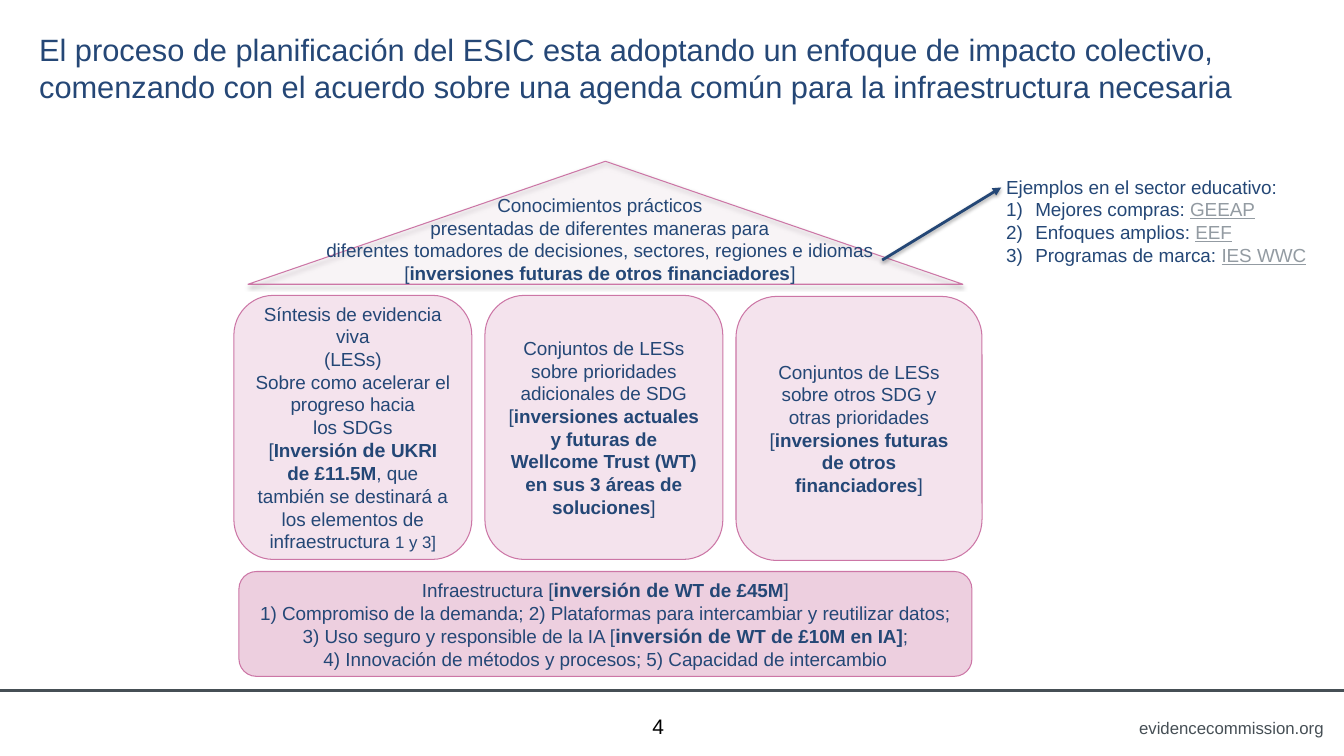
from lxml import etree
from pptx import Presentation
from pptx.dml.color import RGBColor
from pptx.enum.shapes import MSO_CONNECTOR, MSO_SHAPE
from pptx.enum.text import MSO_ANCHOR, PP_ALIGN
from pptx.oxml import parse_xml
from pptx.oxml.ns import nsdecls, qn
from pptx.util import Inches, Pt

LEFT, CENTER, RIGHT = PP_ALIGN.LEFT, PP_ALIGN.CENTER, PP_ALIGN.RIGHT
TOP, MIDDLE = MSO_ANCHOR.TOP, MSO_ANCHOR.MIDDLE
ROUNDED, TRIANGLE = MSO_SHAPE.ROUNDED_RECTANGLE, MSO_SHAPE.ISOSCELES_TRIANGLE
STRAIGHT = MSO_CONNECTOR.STRAIGHT
NAVY, PINK, SLATE, GREY, BLACK = "244776", "CC76A6", "464F55", "939BA2", "000000"
BODY_SIZE = 13.5


def color(hex_string):
    return RGBColor.from_string(hex_string)


def write(shape, paragraphs, size=BODY_SIZE, ink=NAVY, align=CENTER, anchor=MIDDLE, wrap=True):
    """Each paragraph is a list of (text, run options); a newline is a line break."""
    frame = shape.text_frame
    frame.word_wrap = wrap
    frame.vertical_anchor = anchor
    for index, runs in enumerate(paragraphs):
        paragraph = frame.paragraphs[0] if index == 0 else frame.add_paragraph()
        paragraph.alignment = align
        for text, options in runs:
            for line_index, line in enumerate(text.split("\n")):
                if line_index:
                    paragraph.add_line_break()
                    line_break = paragraph._p.findall(qn("a:br"))[-1]
                    etree.SubElement(line_break, qn("a:rPr"), sz=str(int(size * 100)))
                if not line:
                    continue
                run = paragraph.add_run()
                run.text = line
                run.font.name = "Arial"
                run.font.size = Pt(options.get("size", size))
                run.font.bold = options.get("bold", False)
                run.font.underline = options.get("underline", False)
                run.font.color.rgb = color(options.get("ink", ink))


presentation = Presentation()
presentation.slide_width = Inches(13.33)
presentation.slide_height = Inches(7.5)
slide = presentation.slides.add_slide(presentation.slide_layouts[6])
shapes = slide.shapes
plain, bold, bold_large = {}, {"bold": True}, {"bold": True, "size": 14}

# Footer rule, site address and page number
footer_rule = shapes.add_connector(STRAIGHT, Inches(0), Inches(6.85), Inches(13.33), Inches(6.85))
footer_rule.line.color.rgb = color(SLATE)
footer_rule.line.width = Pt(2)
etree.SubElement(footer_rule._element.spPr, qn("a:effectLst"))

site = shapes.add_textbox(Inches(11.17), Inches(7.07), Inches(2.06), Inches(0.3))
write(site, [[("evidencecommission.org", plain)]], 12, SLATE, RIGHT, TOP)

page_number = shapes.add_textbox(Inches(6.47), Inches(7), Inches(0.39), Inches(0.4))
page_frame = page_number.text_frame
page_frame.margin_left = page_frame.margin_right = 0
page_frame.margin_top = page_frame.margin_bottom = 0
write(page_number, [[("4", plain)]], 15, BLACK, LEFT)

# Title
title = shapes.add_textbox(Inches(0.29), Inches(0.12), Inches(12.8), Inches(1.1))
write(title, [[("El proceso de planificación del ESIC esta adoptando un enfoque de impacto "
                "colectivo, comenzando con el acuerdo sobre una agenda común para la "
                "infraestructura necesaria", plain)]], 22, "254776", LEFT)

# House: foundation, three pillars and roof, with fill opacity in percent
house_parts = [
    (ROUNDED, 2.37, 5.67, 7.27, 1.04, 35, [
        [("Infraestructura [", plain), ("inversión de ", bold_large), ("WT de £45M", bold),
         ("]\n1) Compromiso de la demanda; 2) Plataformas para intercambiar y reutilizar datos;\n"
          "3) Uso seguro y responsible de la IA [", plain),
         ("inversión de ", bold_large), ("WT de £10M en IA]", bold), (";", plain)],
        [("4) Innovación de métodos y procesos; 5) Capacidad de intercambio", plain)]]),
    (ROUNDED, 2.32, 2.93, 2.36, 2.62, 20, [
        [("Síntesis de evidencia viva", plain)],
        [("(LESs)", plain)],
        [("Sobre como acelerar el progreso hacia\nlos SDGs", plain)],
        [("[", plain), ("Inversión ", bold), ("de ", bold_large), ("UKRI\nde £11.5M", bold),
         (", que también se destinará a los elementos de infraestructura ", plain),
         ("1 y 3]", {"size": 12})]]),
    (ROUNDED, 4.81, 2.93, 2.36, 2.62, 20, [
        [("Conjuntos de LESs sobre prioridades adicionales de SDG", plain)],
        [("[", plain),
         ("inversiones actuales y futuras de Wellcome Trust (WT) en sus 3 áreas de soluciones", bold),
         ("]", plain)]]),
    (ROUNDED, 7.3, 2.94, 2.44, 2.62, 20, [
        [("Conjuntos de LESs sobre otros SDG y\notras prioridades", plain)],
        [("[", plain), ("inversiones futuras de otros financiadores", bold), ("]", plain)]]),
    (TRIANGLE, 2.46, 1.6, 7.09, 1.22, 5, []),
]
for kind, left, top, width, height, opacity, paragraphs in house_parts:
    part = shapes.add_shape(kind, Inches(left), Inches(top), Inches(width), Inches(height))
    part.shadow.inherit = False
    part.fill.solid()
    part.fill.fore_color.rgb = color(PINK)
    fill_color = part._element.spPr.find(qn("a:solidFill"))[0]
    etree.SubElement(fill_color, qn("a:alpha"), val=str(opacity * 1000))
    part.line.color.rgb = color(PINK)
    part.line.width = Pt(0.75)
    write(part, paragraphs)
roof = part

# Roof text
roof_text = shapes.add_textbox(Inches(3.1), Inches(1.87), Inches(5.7), Inches(1.25))
write(roof_text, [
    [("Conocimientos prácticos\npresentadas de diferentes maneras para\n"
      "diferentes tomadores de decisiones, sectores, regiones e idiomas", plain)],
    [("[", plain), ("inversiones futuras de otros financiadores", bold), ("]", plain)],
], anchor=TOP, wrap=False)

# Numbered examples
link = {"ink": GREY, "underline": True}
examples = shapes.add_textbox(Inches(9.88), Inches(1.69), Inches(3.22), Inches(1.01))
write(examples, [
    [("Ejemplos en el sector educativo:", plain)],
    [("Mejores compras: ", plain), ("GEEAP", link)],
    [("Enfoques amplios: ", plain), ("EEF", link)],
    [("Programas de marca: ", plain), ("IES WWC", link)],
], align=LEFT, anchor=TOP)
for paragraph in examples.text_frame.paragraphs[1:]:
    properties = paragraph._p.get_or_add_pPr()
    properties.set("marL", str(Inches(0.29)))
    properties.set("indent", str(-Inches(0.29)))
    etree.SubElement(properties, qn("a:buFont"), typeface="Arial")
    etree.SubElement(properties, qn("a:buAutoNum"), type="arabicParenR")

# Arrow from the roof to the examples
arrow = shapes.add_connector(STRAIGHT, Inches(8.75), Inches(2.58), Inches(9.93), Inches(1.86))
arrow.line.color.rgb = color(NAVY)
arrow.line.width = Pt(2)
etree.SubElement(arrow.line._get_or_add_ln(), qn("a:tailEnd"), type="triangle")

# Soft shadows under the roof and the arrow
for shape, distance, opacity in [(roof, 1.8, 35), (arrow, 1.6, 38)]:
    properties = shape._element.spPr
    for effects in properties.findall(qn("a:effectLst")):
        properties.remove(effects)
    properties.append(parse_xml(
        f'<a:effectLst {nsdecls("a")}><a:outerShdw blurRad="{Pt(3.1)}" dist="{Pt(distance)}" '
        f'dir="5400000" rotWithShape="0"><a:srgbClr val="{BLACK}">'
        f'<a:alpha val="{opacity * 1000}"/></a:srgbClr></a:outerShdw></a:effectLst>'))

presentation.save("out.pptx")
